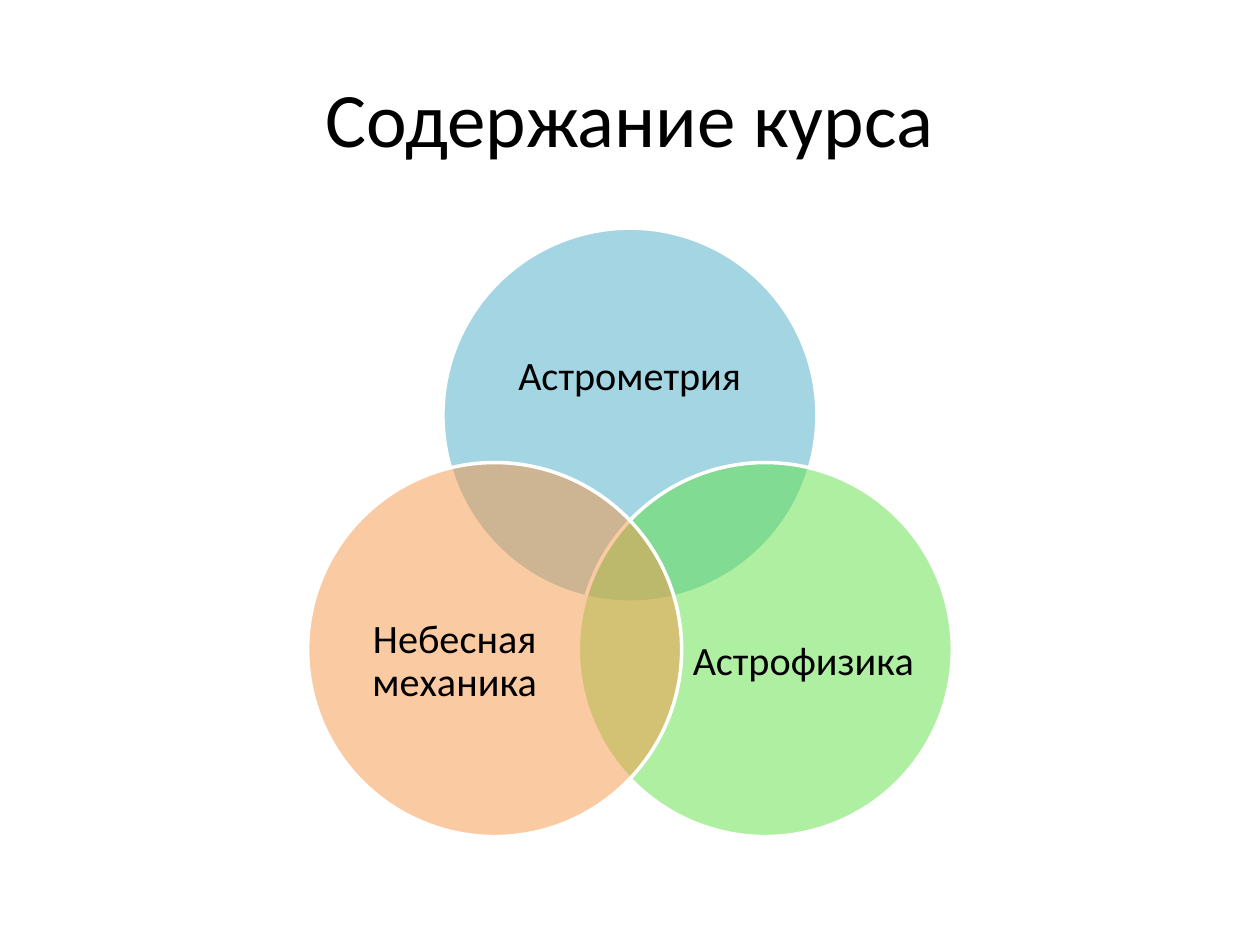
import math
import pptx
import pptx.util
import pptx.dml.color
import pptx.enum.shapes
import pptx.enum.text
import pptx.oxml
from pptx.util import Cm, Pt

RGBColor = pptx.dml.color.RGBColor
BLACK = RGBColor(0x00, 0x00, 0x00)
WHITE = RGBColor(0xFF, 0xFF, 0xFF)
BLUE = RGBColor(0x4B, 0xAC, 0xC6)
GREEN = RGBColor(0x60, 0xE1, 0x46)
ORANGE = RGBColor(0xF7, 0x96, 0x46)

CENTER_X, CENTER_Y = 12.7, 11.52
RING = 3.15
DIAMETER = 7.54


class VennSlide:
    font = "Calibri"
    title_size = 44
    label_size = 23

    def __init__(self, prs):
        self.s = prs.slides.add_slide(prs.slide_layouts[5])

    def set_text(self, tf, text, size):
        tf.word_wrap = True
        tf.vertical_anchor = pptx.enum.text.MSO_ANCHOR.MIDDLE
        p = tf.paragraphs[0]
        p.text = text
        p.alignment = pptx.enum.text.PP_ALIGN.CENTER
        p.font.name = self.font
        p.font.size = Pt(size)
        p.font.color.rgb = BLACK
        return p

    def title(self, text, left, top, width, height):
        sp = self.s.shapes.title
        sp.left, sp.top, sp.width, sp.height = map(Cm, (left, top, width, height))
        self.set_text(sp.text_frame, text, self.title_size)

    def circle(self, angle, color):
        x = CENTER_X + RING * math.cos(math.radians(angle)) - DIAMETER / 2
        y = CENTER_Y + RING * math.sin(math.radians(angle)) - DIAMETER / 2
        sp = self.s.shapes.add_shape(
            pptx.enum.shapes.MSO_SHAPE.OVAL, Cm(x), Cm(y), Cm(DIAMETER), Cm(DIAMETER))
        sp.shadow.inherit = False
        sp.fill.solid()
        sp.fill.fore_color.rgb = color
        clr = sp.element.spPr.find(pptx.oxml.ns.qn("a:solidFill"))[0]
        alpha = pptx.oxml.parse_xml(
            '<a:alpha xmlns:a="http://schemas.openxmlformats.org/drawingml/2006/main"'
            ' val="50000"/>')
        clr.append(alpha)
        sp.line.color.rgb = WHITE
        sp.line.width = Pt(2)

    def label(self, text, left, top, width, height):
        sp = self.s.shapes.add_textbox(Cm(left), Cm(top), Cm(width), Cm(height))
        tf = sp.text_frame
        tf.margin_left = tf.margin_top = tf.margin_right = tf.margin_bottom = 0
        p = self.set_text(tf, text, self.label_size)
        p.line_spacing = 0.9


def main():
    prs = pptx.Presentation()
    prs.slide_width, prs.slide_height = Cm(25.4), Cm(19.05)
    venn = VennSlide(prs)
    venn.title("Содержание курса", 1.27, 0.76, 22.86, 3.18)
    topics = [
        ("Астрометрия", -90, BLUE, (9.93, 5.92, 5.54, 3.4)),
        ("Астрофизика", 30, GREEN, (13.94, 11.28, 4.52, 4.14)),
        ("Небесная механика", 150, ORANGE, (6.91, 11.28, 4.52, 4.14)),
    ]
    for text, angle, color, box in topics:
        venn.circle(angle, color)
        venn.label(text, *box)
    prs.save("out.pptx")


if __name__ == "__main__":
    main()
